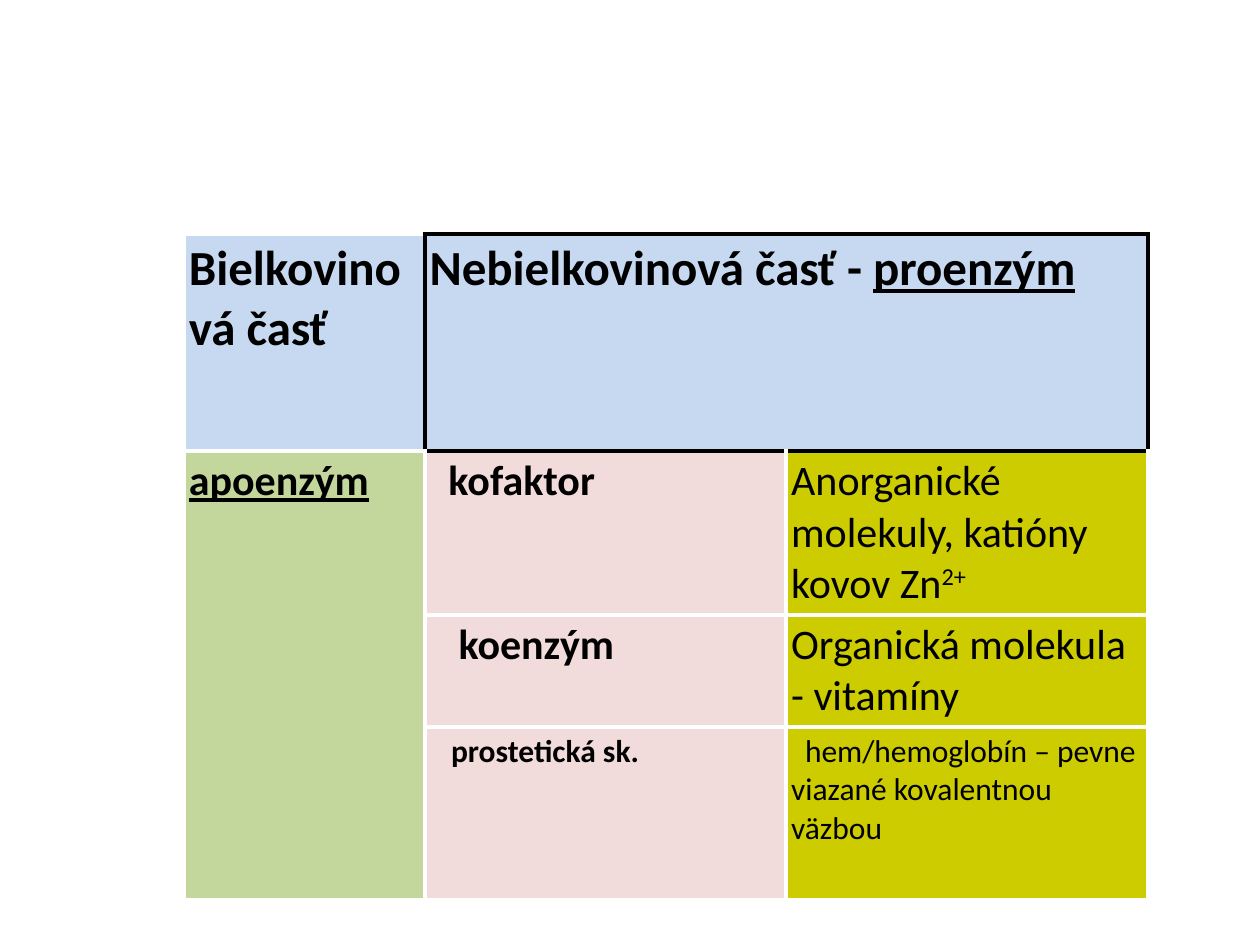
from lxml import etree
from pptx import Presentation
from pptx.dml.color import RGBColor
from pptx.oxml.ns import qn
from pptx.util import Inches, Pt

BLANK_LAYOUT = 6
BLUE, GREEN, PINK, OLIVE = "C6D9F1", "C3D69B", "F2DCDB", "CCCC00"
BLACK, WHITE = "000000", "FFFFFF"
BORDER_WIDTH = Pt(2.5)


def color(value):
    return RGBColor.from_string(value)


def add_border(cell, side, value):
    properties = cell._tc.get_or_add_tcPr()
    line = etree.SubElement(properties, qn("a:ln" + side), w=str(BORDER_WIDTH))
    fill = etree.SubElement(line, qn("a:solidFill"))
    etree.SubElement(fill, qn("a:srgbClr"), val=value)


presentation = Presentation()
presentation.slide_width = Inches(10)
presentation.slide_height = Inches(7.5)
slide = presentation.slides.add_slide(presentation.slide_layouts[BLANK_LAYOUT])

column_widths = [1.91, 2.87, 2.87]
row_heights = [1.72, 1.29, 0.89, 1.37]
table = slide.shapes.add_table(
    len(row_heights), len(column_widths), Inches(1.46), Inches(1.86),
    Inches(sum(column_widths)), Inches(sum(row_heights))).table
for column, width in zip(table.columns, column_widths):
    column.width = Inches(width)
for row, height in zip(table.rows, row_heights):
    row.height = Inches(height)

fills = [[BLUE, BLUE, BLUE]] + [[GREEN, PINK, OLIVE]] * 3
black_borders = {(0, 0): "R", (0, 1): "LRTB", (0, 2): "LRTB", (1, 1): "T", (1, 2): "T"}
for row_index, row_fills in enumerate(fills):
    for column_index, fill_color in enumerate(row_fills):
        cell = table.cell(row_index, column_index)
        cell.margin_left = cell.margin_right = Inches(0.04)
        cell.margin_top = cell.margin_bottom = Inches(0.04)
        black_sides = black_borders.get((row_index, column_index), "")
        for side in "LRTB":
            add_border(cell, side, BLACK if side in black_sides else WHITE)
        cell.fill.solid()
        cell.fill.fore_color.rgb = color(fill_color)

table.cell(0, 1).merge(table.cell(0, 2))
table.cell(1, 0).merge(table.cell(3, 0))

# row, column, size, first-line indent, runs as (text, styles)
contents = [
    (0, 0, 28, 0, [("Bielkovinová časť", "bold")]),
    (0, 1, 28, 0, [("Nebielkovinová časť - ", "bold"), ("proenzým", "bold underline")]),
    (1, 0, 24, 0, [("apoenzým", "bold underline")]),
    (1, 1, 24, 0.15, [("kofaktor", "bold")]),
    (1, 2, 24, 0, [("Anorganické molekuly, katióny kovov Zn", ""), ("2+", "superscript")]),
    (2, 1, 24, 0.23, [("koenzým", "bold")]),
    (2, 2, 24, 0, [("Organická molekula - vitamíny", "")]),
    (3, 1, 18, 0.17, [("prostetická sk.", "bold")]),
    (3, 2, 18, 0.11, [("hem/hemoglobín – pevne viazané kovalentnou väzbou", "")]),
]
for row_index, column_index, size, indent, runs in contents:
    paragraph = table.cell(row_index, column_index).text_frame.paragraphs[0]
    paragraph._p.get_or_add_pPr().set("indent", str(Inches(indent)))
    for text, styles in runs:
        run = paragraph.add_run()
        run.text = text
        run.font.name = "Calibri"
        run.font.size = Pt(size)
        run.font.color.rgb = color(BLACK)
        run.font.bold = "bold" in styles
        run.font.underline = "underline" in styles
        if "superscript" in styles:
            run._r.get_or_add_rPr().set("baseline", "30000")

presentation.save("out.pptx")
